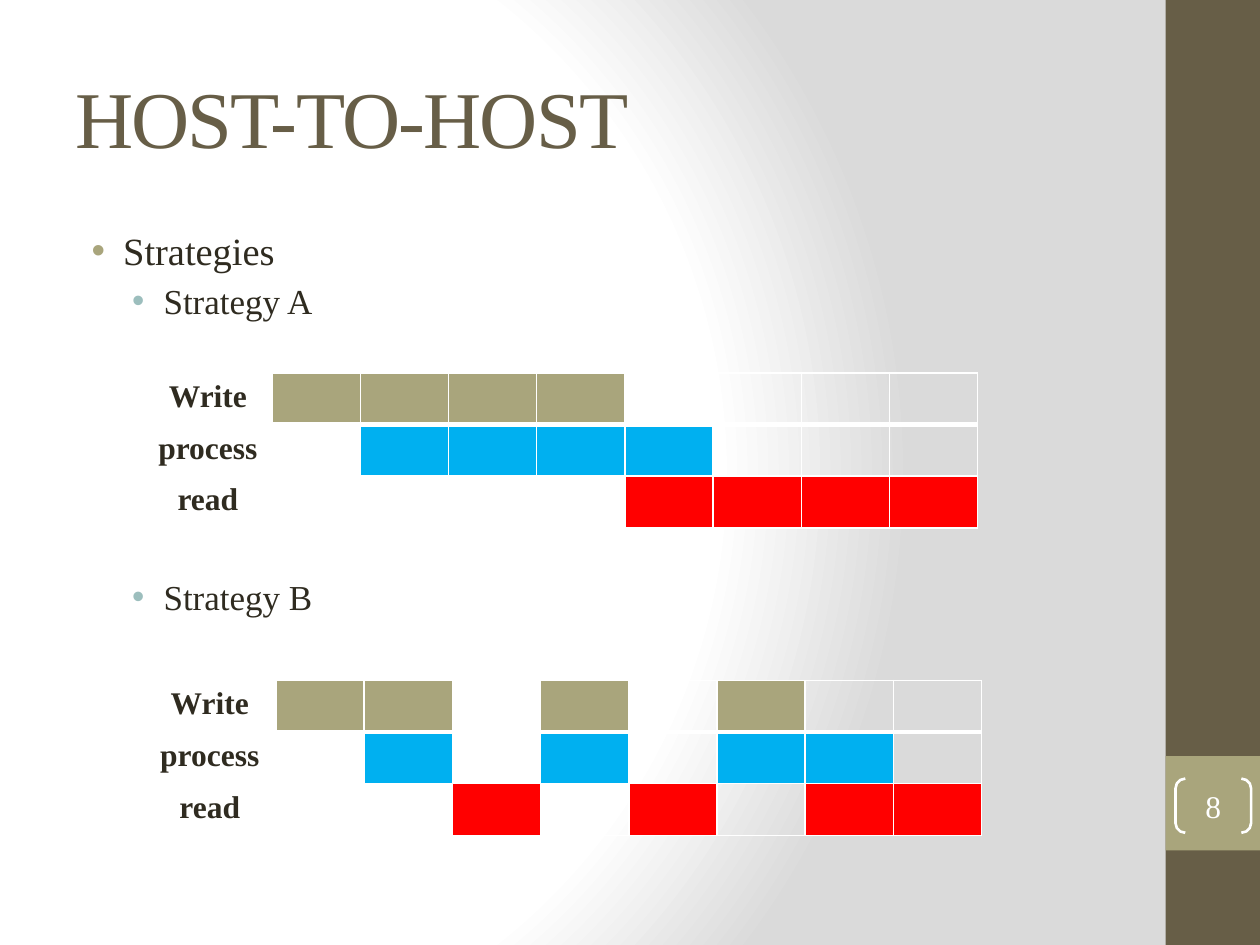
from lxml import etree
from pptx import Presentation as Deck
from pptx.dml.color import RGBColor as Rgb
from pptx.enum.shapes import MSO_SHAPE as Kind
from pptx.enum.text import MSO_ANCHOR as Anchor, PP_ALIGN as Align
from pptx.oxml import parse_xml as parse_tag
from pptx.oxml.ns import nsdecls as decls, qn
from pptx.util import Inches as In, Pt

BROWN = Rgb(0x67, 0x5E, 0x47)
OLIVE = Rgb(0xA9, 0xA5, 0x7C)
TEAL = Rgb(0x9C, 0xBE, 0xBD)
INK = Rgb(0x2F, 0x2B, 0x20)
BLUE = Rgb(0x00, 0xB0, 0xF0)
RED = Rgb(0xFF, 0x00, 0x00)
GRAY = Rgb(0xDA, 0xDA, 0xDA)
WHITE = Rgb(0xFF, 0xFF, 0xFF)


def apply(item, values):
    for name, value in values.items():
        setattr(item, name, value)


class Page:
    face = "Times New Roman"

    def __init__(self, deck):
        self.slide = deck.slides.add_slide(deck.slide_layouts[6])
        self.shapes = self.slide.shapes

    def glow(self, stops, focus):
        marks = "".join(
            f'<a:gs pos="{pos * 1000}"><a:srgbClr val="{tone}"/></a:gs>'
            for pos, tone in stops)
        rect = " ".join(f'{side}="{val * 1000}"' for side, val in zip("ltrb", focus))
        back = parse_tag(
            f'<p:bg {decls("p", "a")}><p:bgPr><a:gradFill rotWithShape="1">'
            f'<a:gsLst>{marks}</a:gsLst><a:path path="circle">'
            f'<a:fillToRect {rect}/></a:path></a:gradFill>'
            '<a:effectLst/></p:bgPr></p:bg>')
        self.shapes.element.addprevious(back)

    def label(self, para, text, size, tone=INK, **more):
        run = para.add_run()
        run.text = text
        apply(run.font, {"name": self.face, "size": Pt(size), **more})
        run.font.color.rgb = tone
        return run

    def block(self, box, tone):
        shape = self.shapes.add_shape(Kind.RECTANGLE, *map(In, box))
        shape.shadow.inherit = False
        shape.fill.solid()
        shape.fill.fore_color.rgb = tone
        shape.line.fill.background()

    def frame(self, box, anchor):
        frame = self.shapes.add_textbox(*map(In, box)).text_frame
        apply(frame, {"word_wrap": True, "vertical_anchor": anchor})
        return frame

    def title(self, box, text):
        frame = self.frame(box, Anchor.MIDDLE)
        run = self.label(frame.paragraphs[0], text, 46, BROWN)
        run._r.get_or_add_rPr().set("spc", "-100")

    def bullets(self, box, items):
        frame = self.frame(box, Anchor.TOP)
        for num, (text, level, gap) in enumerate(items):
            para = frame.add_paragraph() if num else frame.paragraphs[0]
            apply(para, {"level": level, "space_before": Pt(gap)})
            size, left, tone = ((22, 0.38, OLIVE), (20, 0.7, TEAL))[level]
            self.label(para, text, size)
            props = para._p.get_or_add_pPr()
            props.set("marL", str(In(left)))
            props.set("indent", str(In(-0.25)))
            color = etree.SubElement(props, qn("a:buClr"))
            etree.SubElement(color, qn("a:srgbClr"), val=str(tone))
            etree.SubElement(props, qn("a:buFont"), typeface="Arial")
            etree.SubElement(props, qn("a:buChar"), char="•")

    def number(self, box, text):
        shape = self.shapes.add_shape(Kind.DOUBLE_BRACKET, *map(In, box))
        shape.shadow.inherit = False
        shape.adjustments[0] = 0.18
        shape.fill.background()
        shape.line.color.rgb = WHITE
        shape.line.width = Pt(1.5)
        frame = shape.text_frame
        apply(frame, {"margin_left": 0, "margin_right": 0, "margin_top": 0,
                      "margin_bottom": 0, "vertical_anchor": Anchor.MIDDLE})
        para = frame.paragraphs[0]
        para.alignment = Align.CENTER
        self.label(para, text, 18, WHITE)

    def edge(self, cell, sides):
        props = cell._tc.get_or_add_tcPr()
        for spot, (side, width) in enumerate(sides.items()):
            props.insert(spot, parse_tag(
                f'<a:ln{side} {decls("a")} w="{Pt(width)}"><a:solidFill>'
                f'<a:srgbClr val="{WHITE}"/></a:solidFill></a:ln{side}>'))

    def chart(self, left, top, first, step, rows):
        count = len(rows[0][2])
        size = (first + step * count, 0.41 * len(rows))
        table = self.shapes.add_table(
            len(rows), count + 1, *map(In, (left, top, *size))).table
        apply(table, {"first_row": False, "horz_banding": False})
        for num, col in enumerate(table.columns):
            col.width = In(step if num else first)
        for i, (name, tone, slots) in enumerate(rows):
            table.rows[i].height = In(0.41)
            para = table.cell(i, 0).text_frame.paragraphs[0]
            para.alignment = Align.CENTER
            self.label(para, name, 18, bold=True)
            for j, slot in enumerate("." + slots):
                cell = table.cell(i, j)
                if slot == "#":
                    cell.fill.solid()
                    cell.fill.fore_color.rgb = tone
                else:
                    cell.fill.background()
                self.edge(cell, {"L": 1, "R": 1, "T": 3 if i == 1 else 1,
                                 "B": 1 if i else 3})


def main():
    deck = Deck()
    apply(deck, {"slide_width": In(10), "slide_height": In(7.5)})
    page = Page(deck)
    page.glow([(0, WHITE), (75, WHITE), (100, GRAY)], (20, 50, 100, 50))
    page.block((9.25, 0, 0.75, 7.5), BROWN)
    page.block((9.25, 6, 0.75, 0.75), OLIVE)
    page.title((0.5, 0.3, 8.33, 1.25), "HOST-TO-HOST")
    page.bullets((0.5, 1.75, 8.33, 5.25), [
        ("Strategies", 0, 4.4), ("Strategy A", 1, 4), ("Strategy B", 1, 145)])
    page.number((9.33, 6.18, 0.6, 0.43), "8")
    steps = (("Write", OLIVE), ("process", BLUE), ("read", RED))
    plans = (
        (2.96, 1.02, ("####....", ".####...", "....####")),
        (5.4, 1.05, ("##.#.#..", ".#.#.##.", "..#.#.##")))
    for top, first, slots in plans:
        rows = [(*step, slot) for step, slot in zip(steps, slots)]
        page.chart(1.14, top, first, 0.7, rows)
    deck.save("out.pptx")


if __name__ == "__main__":
    main()
